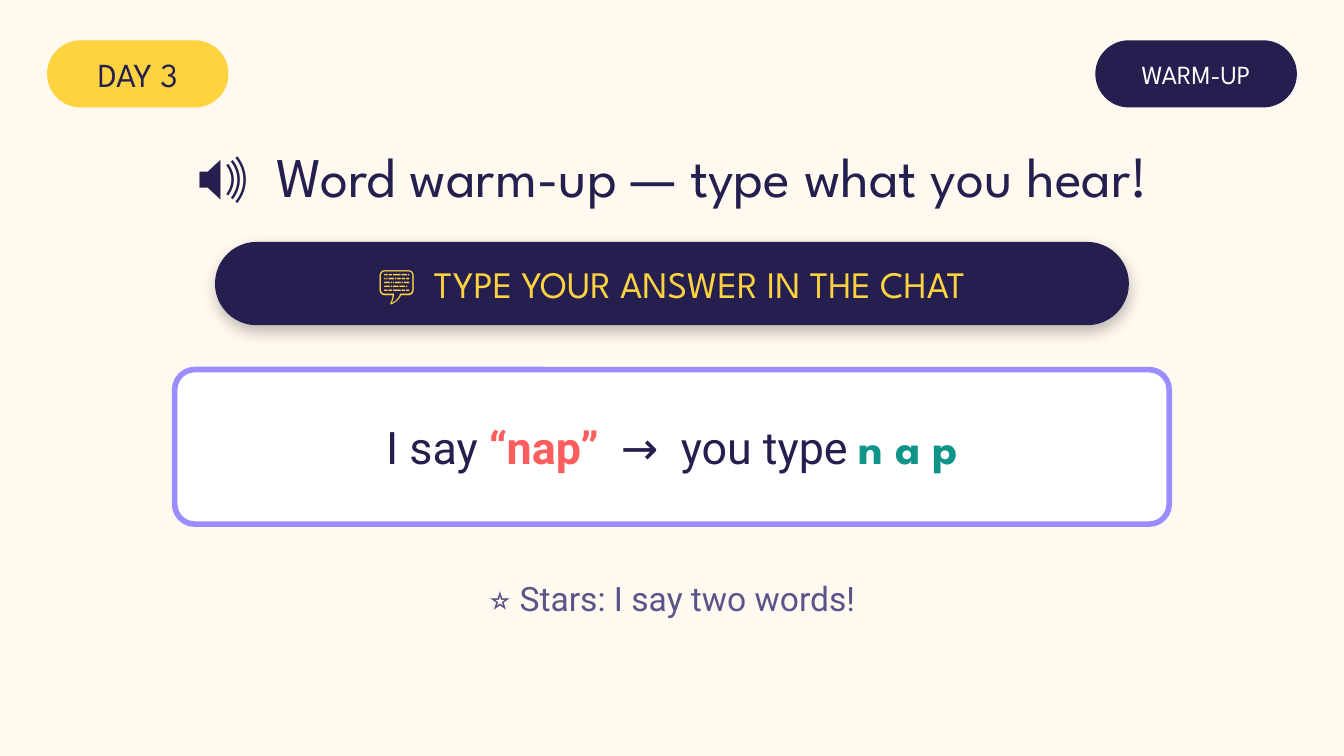
import lxml.etree
import pptx
import pptx.dml.color
import pptx.enum.shapes
import pptx.enum.text
import pptx.oxml.ns
import pptx.util

Inches = pptx.util.Inches
COLORS = {
    "cream": "FFF9EF",
    "yellow": "FFD23F",
    "navy": "241F4E",
    "white": "FFFFFF",
    "violet": "9B8CFF",
    "coral": "FF5D5D",
    "teal": "0E9488",
    "muted": "5A548A",
    "black": "000000",
}
HEADING_FONT = "League Spartan"
BODY_FONT = "Roboto"


def rgb(color):
    return pptx.dml.color.RGBColor.from_string(COLORS[color])


def add_run(paragraph, text, size=18, font=BODY_FONT, color="navy", bold=False):
    run = paragraph.add_run()
    run.text = text
    run.font.size = pptx.util.Pt(size)
    run.font.name = font
    run.font.bold = bold
    run.font.color.rgb = rgb(color)


class SlideBuilder:
    def __init__(self, presentation):
        self.slide = presentation.slides.add_slide(presentation.slide_layouts[5])
        self.slide.background.fill.solid()
        self.slide.background.fill.fore_color.rgb = rgb("cream")

    def prepare_text(self, shape, inset=True):
        frame = shape.text_frame
        frame.word_wrap = True
        frame.auto_size = pptx.enum.text.MSO_AUTO_SIZE.NONE
        frame.vertical_anchor = pptx.enum.text.MSO_ANCHOR.MIDDLE
        frame.margin_left = frame.margin_right = Inches(0.1 if inset else 0)
        frame.margin_top = frame.margin_bottom = Inches(0.05 if inset else 0)
        paragraph = frame.paragraphs[0]
        paragraph.alignment = pptx.enum.text.PP_ALIGN.CENTER
        return paragraph

    def title(self, text, left, top, width, height, **style):
        shape = self.slide.shapes.title
        shape.left, shape.top = Inches(left), Inches(top)
        shape.width, shape.height = Inches(width), Inches(height)
        add_run(self.prepare_text(shape), text, **style)

    def label(self, text, left, top, width, height, **style):
        shape = self.slide.shapes.add_textbox(
            Inches(left), Inches(top), Inches(width), Inches(height))
        add_run(self.prepare_text(shape), text, **style)

    def rounded_box(self, left, top, width, height, fill, radius=0.5, line=None):
        shape = self.slide.shapes.add_shape(
            pptx.enum.shapes.MSO_SHAPE.ROUNDED_RECTANGLE,
            Inches(left), Inches(top), Inches(width), Inches(height))
        shape.adjustments[0] = radius
        shape.shadow.inherit = False
        shape.fill.solid()
        shape.fill.fore_color.rgb = rgb(fill)
        if line:
            shape.line.color.rgb = rgb(line)
            shape.line.width = pptx.util.Pt(3)
        else:
            shape.line.fill.background()
        return shape

    def pill(self, text, left, top, width, height, fill, **style):
        shape = self.rounded_box(left, top, width, height, fill)
        add_run(self.prepare_text(shape, inset=False), text, font=HEADING_FONT, **style)
        return shape

    def card(self, runs, left, top, width, height, **style):
        shape = self.rounded_box(left, top, width, height, **style)
        paragraph = self.prepare_text(shape)
        for text, run_style in runs:
            add_run(paragraph, text, size=24, **run_style)

    def drop_shadow(self, shape):
        qn = pptx.oxml.ns.qn
        effects = shape.element.spPr.find(qn("a:effectLst"))
        shadow = lxml.etree.SubElement(
            effects, qn("a:outerShdw"), blurRad=str(pptx.util.Pt(8)),
            dist=str(pptx.util.Pt(3)), dir="5400000", algn="ctr", rotWithShape="0")
        color = lxml.etree.SubElement(shadow, qn("a:srgbClr"), val=COLORS["black"])
        lxml.etree.SubElement(color, qn("a:alpha"), val="25000")


def main():
    presentation = pptx.Presentation()
    presentation.slide_width = Inches(10)
    presentation.slide_height = Inches(10 * 9 / 16)
    builder = SlideBuilder(presentation)

    builder.pill("DAY 3", 0.35, 0.3, 1.35, 0.5, "yellow", size=18)
    builder.pill("WARM-UP", 8.15, 0.3, 1.5, 0.5, "navy", size=14, color="white")
    builder.title("🔊  Word warm-up — type what you hear!", 0, 0.95, 10, 0.7,
                  size=30, font=HEADING_FONT)
    chat_banner = builder.pill("💬  TYPE YOUR ANSWER IN THE CHAT", 1.6, 1.8, 6.8, 0.62,
                               "navy", size=20, color="yellow")
    builder.drop_shadow(chat_banner)
    example = [
        ("I say ", {}),
        ("“nap”", {"color": "coral", "bold": True}),
        ("  →  you type ", {}),
        ("n a p", {"font": HEADING_FONT, "color": "teal", "bold": True}),
    ]
    builder.card(example, 1.3, 2.75, 7.4, 1.15, fill="white", radius=0.13, line="violet")
    builder.label("⭐ Stars: I say two words!", 0, 4.2, 10, 0.5, color="muted")

    presentation.save("out.pptx")


if __name__ == "__main__":
    main()
